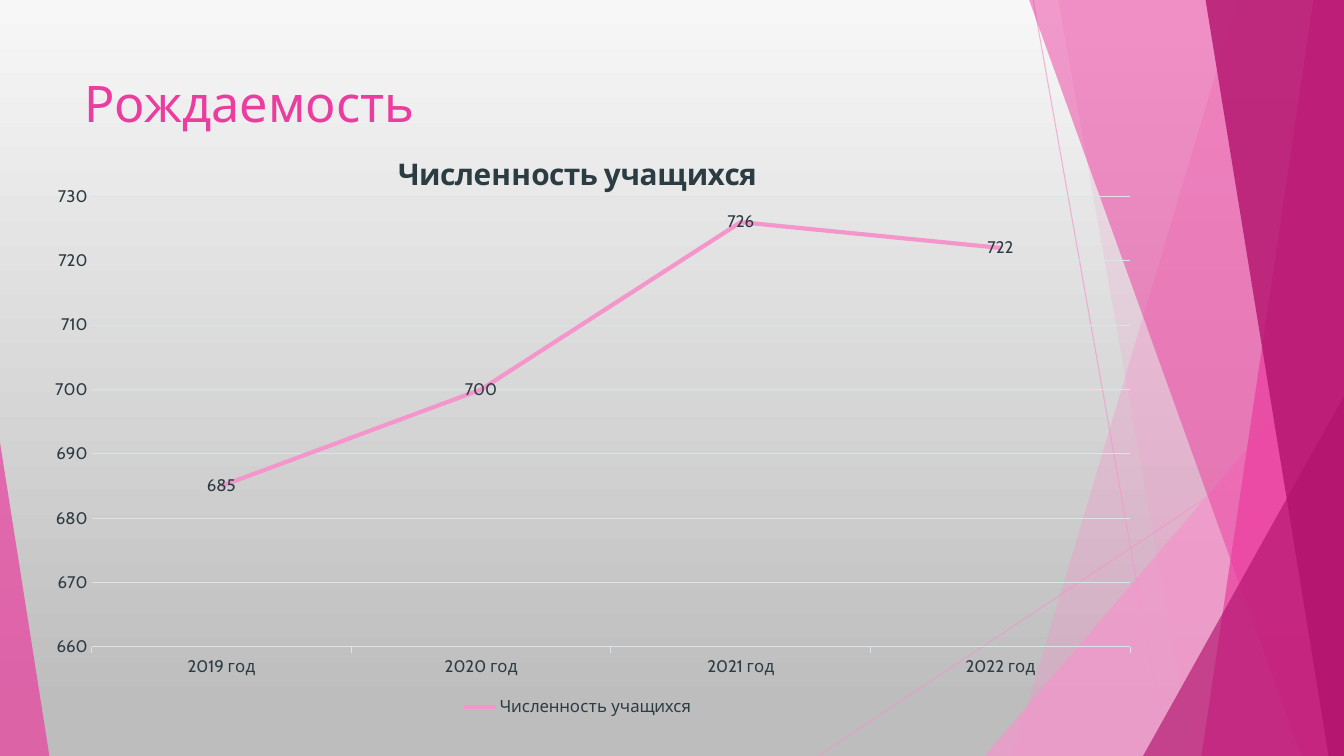
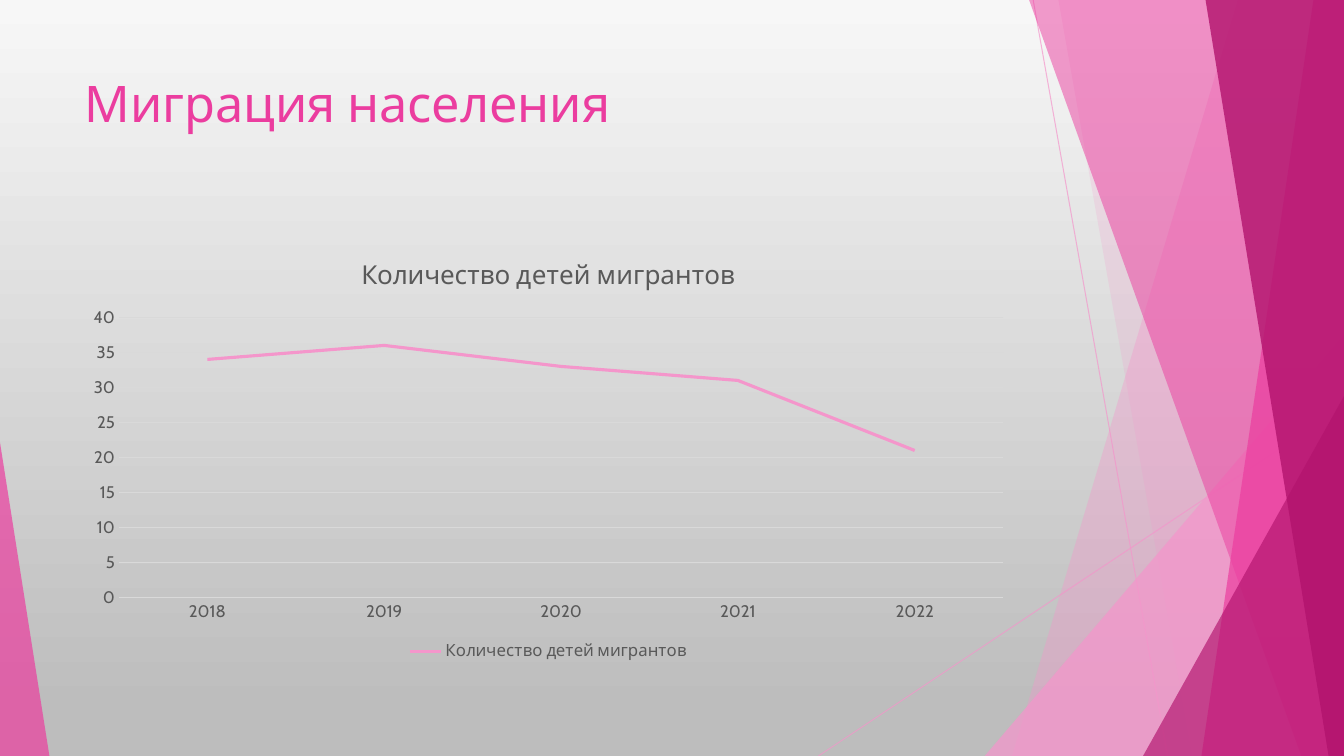
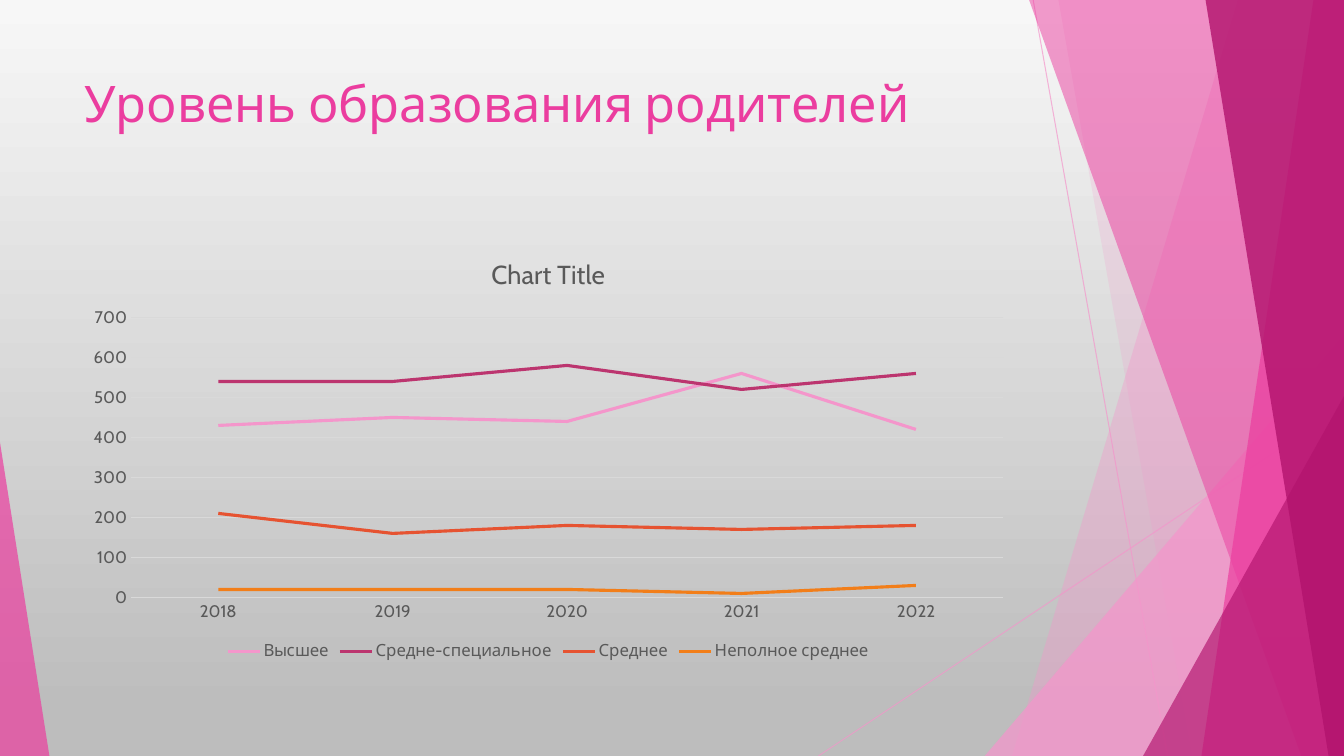
import pptx
import pptx.chart.data
import pptx.dml.color
import pptx.enum.chart
import pptx.enum.shapes
import pptx.enum.text
import pptx.oxml
import pptx.oxml.ns
import pptx.util
from lxml import etree

Pt = pptx.util.Pt
RGB = pptx.dml.color.RGBColor
qn = pptx.oxml.ns.qn
TICK = pptx.enum.chart.XL_TICK_MARK

LIGHT = RGB(0xF7, 0xF7, 0xF7)
GREY = RGB(0xBD, 0xBD, 0xBD)
PINK = RGB(0xF4, 0x96, 0xCB)
MAGENTA = RGB(0xEB, 0x3D, 0x9F)
PLUM = RGB(0xB2, 0x13, 0x6D)
BERRY = RGB(0xBC, 0x35, 0x6F)
RED = RGB(0xE6, 0x53, 0x31)
ORANGE = RGB(0xF2, 0x7E, 0x19)
SLATE = RGB(0x2C, 0x3C, 0x43)
PALE = RGB(0xDB, 0xE4, 0xE7)
TEXT = RGB(0x59, 0x59, 0x59)
GRID = RGB(0xD9, 0xD9, 0xD9)
FONT = "Cabin"
W, H = 960, 540


def set_alpha(sp, percent):
    for clr in sp.element.spPr.iter(qn("a:srgbClr")):
        etree.SubElement(clr, qn("a:alpha")).set("val", str(percent * 1000))


def set_font(font, size, color, bold=False):
    font.name = FONT
    font.size = Pt(size)
    font.color.rgb = color
    font.bold = bold


prs = pptx.Presentation()
prs.slide_width, prs.slide_height = Pt(W), Pt(H)
layout = prs.slide_layouts[6]

fill = layout.background.fill
fill.gradient()
fill.gradient_angle = 270
for stop, pos, color in zip(fill.gradient_stops, (0, 0.94), (LIGHT, GREY)):
    stop.position = pos
    stop.color.rgb = color

slides = [prs.slides.add_slide(layout) for _ in range(3)]
shapes = slides[0].shapes

facets = []
for x1, y1, x2, y2 in [(738, 0, 834, H), (W, 290, 584.6, H)]:
    line = shapes.add_connector(
        pptx.enum.shapes.MSO_CONNECTOR.STRAIGHT, Pt(x1), Pt(y1), Pt(x2), Pt(y2))
    line.line.color.rgb = PINK
    line.line.width = Pt(0.75)
    set_alpha(line, 70)
    etree.SubElement(line.element.spPr, qn("a:effectLst"))
    facets.append(line)

for kind, geometry, color, alpha in [
    ("band", (884.2, 722.9), PINK, 36),
    ("band", (756, 851.8), PINK, 20),
    ("triangle", (703.4, 239.8, W, 1), PINK, 72),
    ("band", (735.1, 929.5), MAGENTA, 50),
    ("band", (938.2, 858.2), MAGENTA, 70),
    ("band", (861.1, 949), PLUM, 80),
    ("triangle", (816.5, 283, W, 1), PLUM, 66),
    ("triangle", (0, 316.1, 35.3, 0), MAGENTA, 70),
]:
    if kind == "band":
        top, bottom = geometry
        builder = shapes.build_freeform(Pt(top), 0)
        builder.add_line_segments(
            [(Pt(W), 0), (Pt(W), Pt(H)), (Pt(bottom), Pt(H))], close=True)
        sp = builder.convert_to_shape()
    else:
        left, top, right, apex = geometry
        sp = shapes.add_shape(
            pptx.enum.shapes.MSO_SHAPE.ISOSCELES_TRIANGLE,
            Pt(left), Pt(top), Pt(right - left), Pt(H - top))
        sp.adjustments[0] = apex
    sp.shadow.inherit = False
    sp.fill.solid()
    sp.fill.fore_color.rgb = color
    sp.line.fill.background()
    set_alpha(sp, alpha)
    facets.append(sp)

for sp in facets:
    layout.shapes.element.append(sp.element)

YEARS = ["2018", "2019", "2020", "2021", "2022"]
BODY = (53.3, 169.9, 676.8, 305.3)
pages = [
    dict(title="Рождаемость", box=(18, 93.6, 789.8, 421.2),
         chart_title="Численность учащихся", title_size=21.3, bold=True,
         color=SLATE, grid=PALE, tick=TICK.OUTSIDE, width=3, scale=(660, 730, 10),
         labels=True, plot_area=(0.06, 0.111, 0.94, 0.764),
         cats=["2019 год", "2020 год", "2021 год", "2022 год"],
         series=[("Численность учащихся", (685, 700, 726, 722), PINK)]),
    dict(title="Миграция населения", box=BODY,
         chart_title="Количество детей мигрантов", title_size=18.6, bold=False,
         color=TEXT, grid=GRID, tick=TICK.NONE, width=2.25, scale=(0, 40, 5),
         labels=False, plot_area=None, cats=YEARS,
         series=[("Количество детей мигрантов", (34, 36, 33, 31, 21), PINK)]),
    dict(title="Уровень образования родителей", box=BODY,
         chart_title="Chart Title", title_size=18.6, bold=False,
         color=TEXT, grid=GRID, tick=TICK.NONE, width=2.25, scale=(0, 700, 100),
         labels=False, plot_area=None, cats=YEARS,
         series=[("Высшее", (430, 450, 440, 560, 420), PINK),
                 ("Средне-специальное", (540, 540, 580, 520, 560), BERRY),
                 ("Среднее", (210, 160, 180, 170, 180), RED),
                 ("Неполное среднее", (20, 20, 20, 10, 30), ORANGE)]),
]

for s, page in zip(slides, pages):
    tf = s.shapes.add_textbox(Pt(53.3), Pt(48), Pt(676.8), Pt(104)).text_frame
    tf.word_wrap = True
    tf.vertical_anchor = pptx.enum.text.MSO_ANCHOR.TOP
    p = tf.paragraphs[0]
    p.text = page["title"]
    set_font(p.font, 36, MAGENTA)

    data = pptx.chart.data.CategoryChartData()
    data.categories = page["cats"]
    for name, values, _ in page["series"]:
        data.add_series(name, values)
    chart = s.shapes.add_chart(
        pptx.enum.chart.XL_CHART_TYPE.LINE, *map(Pt, page["box"]), data).chart
    set_font(chart.font, 12, page["color"])

    chart.has_title = True
    p = chart.chart_title.text_frame.paragraphs[0]
    p.text = page["chart_title"]
    set_font(p.font, page["title_size"], page["color"], page["bold"])
    chart.chart_title.include_in_layout = False

    chart.has_legend = True
    chart.legend.position = pptx.enum.chart.XL_LEGEND_POSITION.BOTTOM
    chart.legend.include_in_layout = False

    cat_axis, val_axis = chart.category_axis, chart.value_axis
    cat_axis.major_tick_mark = page["tick"]
    val_axis.major_tick_mark = TICK.NONE
    val_axis.minimum_scale, val_axis.maximum_scale, val_axis.major_unit = page["scale"]
    val_axis.format.line.fill.background()
    val_axis.has_major_gridlines = True
    for fmt in (cat_axis.format, val_axis.major_gridlines.format):
        fmt.line.color.rgb = page["grid"]
        fmt.line.width = Pt(0.75)

    plot = chart.plots[0]
    plot.vary_by_categories = False
    for series, (_, _, color) in zip(plot.series, page["series"]):
        series.smooth = False
        series.format.line.color.rgb = color
        series.format.line.width = Pt(page["width"])

    if page["labels"]:
        plot.has_data_labels = True
        labels = plot.data_labels
        labels.show_value = True
        labels.position = pptx.enum.chart.XL_LABEL_POSITION.CENTER
        set_font(labels.font, 12, page["color"])

    if page["plot_area"]:
        area = chart.element.find(".//" + qn("c:plotArea"))
        for old in area.findall(qn("c:layout")):
            area.remove(old)
        box = etree.Element(qn("c:layout"))
        area.insert(0, box)
        manual = etree.SubElement(box, qn("c:manualLayout"))
        settings = [("layoutTarget", "inner"), ("xMode", "edge"), ("yMode", "edge")]
        settings += zip("xywh", page["plot_area"])
        for tag, value in settings:
            etree.SubElement(manual, qn("c:" + tag)).set("val", str(value))

prs.save("out.pptx")
